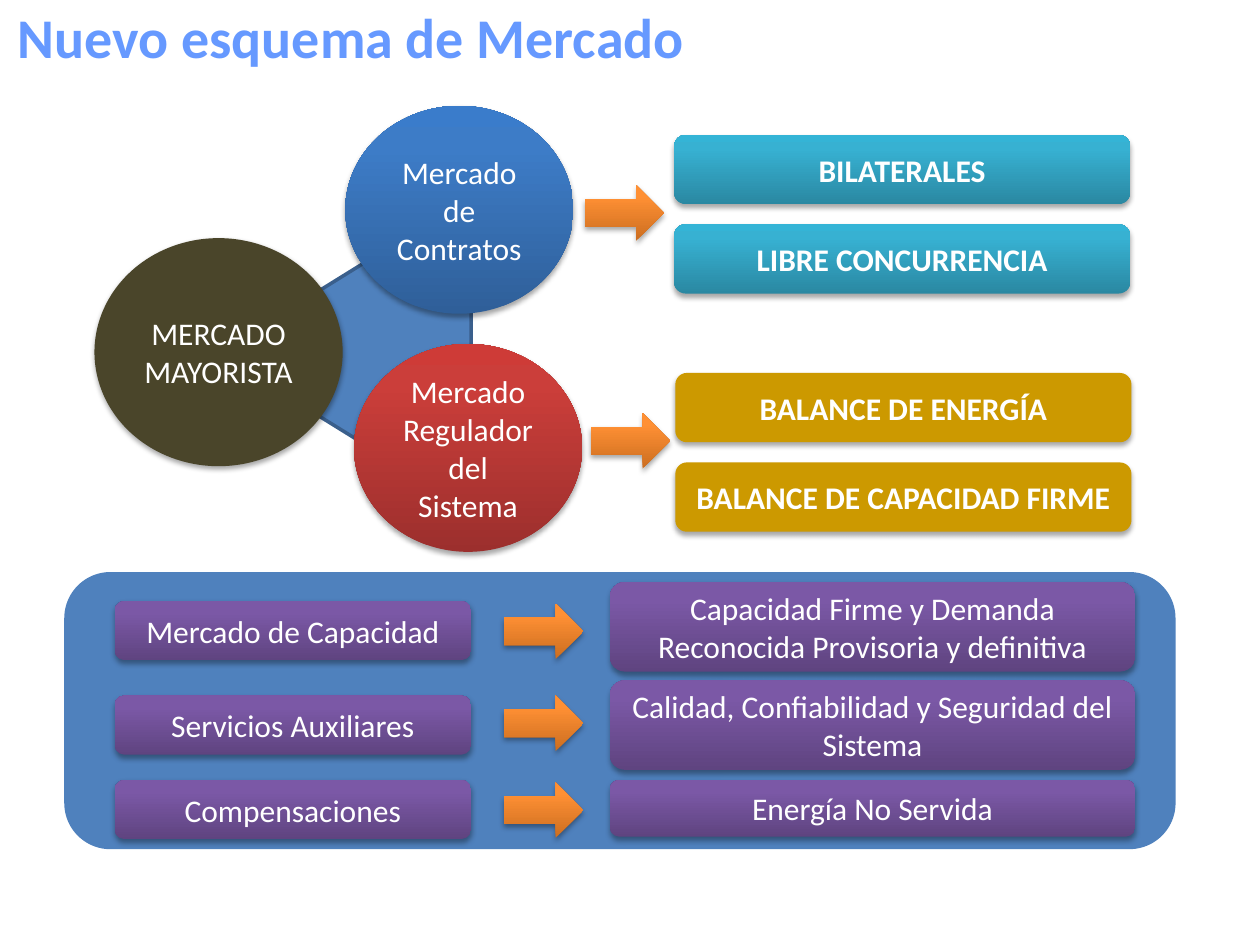
from dataclasses import dataclass
from copy import deepcopy
from typing import Optional, Union

from lxml import etree
from pptx import Presentation
from pptx import util as u
from pptx.dml import color
from pptx.enum import shapes, text
from pptx.oxml import ns

RGB = color.RGBColor
Kind = shapes.MSO_SHAPE
FONT = "Calibri"
WHITE = RGB(0xFF, 0xFF, 0xFF)
TITLE_BLUE = RGB(0x66, 0x99, 0xFF)
PANEL_BLUE = RGB(0x4F, 0x81, 0xBD)
EDGE_BLUE = RGB(0x3A, 0x5F, 0x8C)
OLIVE = RGB(0x4A, 0x45, 0x2A)
GOLD = RGB(0xCC, 0x99, 0x00)
RED = (RGB(0x9C, 0x2F, 0x2D), RGB(0xCB, 0x3E, 0x3A), RGB(0xCE, 0x3B, 0x37))
BLUE = (RGB(0x2F, 0x5F, 0x99), RGB(0x3D, 0x7C, 0xC7), RGB(0x3A, 0x7C, 0xCB))
TEAL = (RGB(0x2A, 0x88, 0xA2), RGB(0x37, 0xB1, 0xD2), RGB(0x34, 0xB4, 0xD6))
ORANGE = (RGB(0xCC, 0x6E, 0x20), RGB(0xFF, 0x90, 0x34), RGB(0xFF, 0x91, 0x36))
PURPLE = (RGB(0x5F, 0x44, 0x80), RGB(0x7B, 0x58, 0xA6), RGB(0x7C, 0x57, 0xA8))
STOP_POSITIONS = (0, 0.8, 1)
Paint = Union[RGB, tuple]


@dataclass
class Block:
    kind: Kind
    left: float
    top: float
    width: float
    height: float
    paint: Paint
    words: str = ""
    bold: bool = False
    shadow: bool = True
    rotation: float = 0
    edge: Optional[RGB] = None


@dataclass
class MarketRow:
    name: str
    detail: str
    name_top: float
    arrow_top: float
    detail_top: float
    detail_height: float


def add_shadow(parent, blur: float, distance: float, alpha: int) -> None:
    for old in parent.findall(ns.qn("a:effectLst")):
        parent.remove(old)
    effects = etree.SubElement(parent, ns.qn("a:effectLst"))
    outer = etree.SubElement(
        effects, ns.qn("a:outerShdw"), blurRad=str(u.Pt(blur)),
        dist=str(u.Pt(distance)), dir="5400000", rotWithShape="0")
    black = etree.SubElement(outer, ns.qn("a:srgbClr"), val="000000")
    etree.SubElement(black, ns.qn("a:alpha"), val=str(alpha * 1000))


def paint_fill(shape, paint: Paint) -> None:
    if isinstance(paint, RGB):
        shape.fill.solid()
        shape.fill.fore_color.rgb = paint
        return
    shape.fill.gradient()
    shape.fill.gradient_angle = 90
    stop_list = shape.element.spPr.find(".//" + ns.qn("a:gsLst"))
    stop_list.append(deepcopy(stop_list[-1]))
    for stop, position, tone in zip(shape.fill.gradient_stops, STOP_POSITIONS, paint):
        stop.position = position
        stop.color.rgb = tone


def draw_block(page, block: Block) -> None:
    shape = page.shapes.add_shape(
        block.kind, u.Inches(block.left), u.Inches(block.top),
        u.Inches(block.width), u.Inches(block.height))
    shape.rotation = block.rotation
    paint_fill(shape, block.paint)
    if block.edge is None:
        shape.line.fill.background()
    else:
        shape.line.color.rgb = block.edge
        shape.line.width = u.Pt(2)
    shape.shadow.inherit = False
    if block.shadow:
        add_shadow(shape.element.spPr, 3.1, 1.8, 35)
    if block.words:
        frame = shape.text_frame
        frame.word_wrap = True
        frame.vertical_anchor = text.MSO_ANCHOR.MIDDLE
        para = frame.paragraphs[0]
        para.alignment = text.PP_ALIGN.CENTER
        span = para.add_run()
        span.text = block.words
        span.font.size = u.Pt(18)
        span.font.bold = block.bold
        span.font.color.rgb = WHITE
        span.font.name = FONT


def draw_title(page, words: str) -> None:
    box = page.shapes.title
    box.left, box.top = u.Inches(0.04), u.Inches(-0.11)
    box.width, box.height = u.Inches(7.19), u.Inches(0.79)
    box.text_frame.word_wrap = True
    box.text_frame.vertical_anchor = text.MSO_ANCHOR.MIDDLE
    para = box.text_frame.paragraphs[0]
    para.alignment = text.PP_ALIGN.LEFT
    span = para.add_run()
    span.text = words
    span.font.size = u.Pt(32)
    span.font.bold = True
    span.font.color.rgb = TITLE_BLUE
    add_shadow(span.font.color.rgb and para.runs[0].font.fill and
               box.element.find(".//" + ns.qn("a:rPr")), 3, 3, 43)
    span.font.name = FONT


def draw_arrow(page, left: float, top: float) -> None:
    draw_block(page, Block(Kind.RIGHT_ARROW, left, top, 0.63, 0.44, ORANGE))


def draw_branch(page, left: float, top: float, paint: Paint, labels: tuple,
                arrow_left: float, arrow_top: float) -> None:
    for index, label in enumerate(labels):
        draw_block(page, Block(Kind.ROUNDED_RECTANGLE, left, top + index * 0.71,
                               3.62, 0.55, paint, label, bold=True))
    draw_arrow(page, arrow_left, arrow_top)


def draw_market_row(page, row: MarketRow) -> None:
    draw_block(page, Block(Kind.ROUNDED_RECTANGLE, 0.91, row.name_top,
                           2.83, 0.47, PURPLE, row.name))
    draw_arrow(page, 4, row.arrow_top)
    draw_block(page, Block(Kind.ROUNDED_RECTANGLE, 4.84, row.detail_top,
                           4.17, row.detail_height, PURPLE, row.detail))


MARKETS = (
    Block(Kind.ISOSCELES_TRIANGLE, 1.49, 1.8, 2.49, 2.01, PANEL_BLUE,
          shadow=False, rotation=270, edge=EDGE_BLUE),
    Block(Kind.OVAL, 2.81, 2.73, 1.81, 1.65, RED, "Mercado Regulador del Sistema"),
    Block(Kind.OVAL, 2.74, 0.84, 1.81, 1.65, BLUE, "Mercado de Contratos"),
    Block(Kind.OVAL, 0.75, 1.89, 1.97, 1.81, OLIVE, "MERCADO MAYORISTA"),
)
PANEL = Block(Kind.ROUNDED_RECTANGLE, 0.51, 4.54, 8.82, 2.2, PANEL_BLUE, shadow=False)
ROWS = (
    MarketRow("Mercado de Capacidad",
              "Capacidad Firme y Demanda Reconocida Provisoria y definitiva",
              4.77, 4.79, 4.62, 0.71),
    MarketRow("Servicios Auxiliares",
              "Calidad, Confiabilidad y Seguridad del Sistema",
              5.52, 5.52, 5.4, 0.71),
    MarketRow("Compensaciones", "Energía No Servida", 6.19, 6.21, 6.19, 0.45),
)


def main() -> None:
    deck = Presentation()
    deck.slide_width, deck.slide_height = u.Inches(10), u.Inches(7.5)
    page = deck.slides.add_slide(deck.slide_layouts[5])
    draw_title(page, "Nuevo esquema de Mercado")
    for market in MARKETS:
        draw_block(page, market)
    draw_branch(page, 5.35, 1.07, TEAL, ("BILATERALES", "LIBRE CONCURRENCIA"), 4.64, 1.47)
    draw_branch(page, 5.36, 2.96, GOLD,
                ("BALANCE DE ENERGÍA", "BALANCE DE CAPACIDAD FIRME"), 4.69, 3.28)
    draw_block(page, PANEL)
    for row in ROWS:
        draw_market_row(page, row)
    deck.save("out.pptx")


if __name__ == "__main__":
    main()
